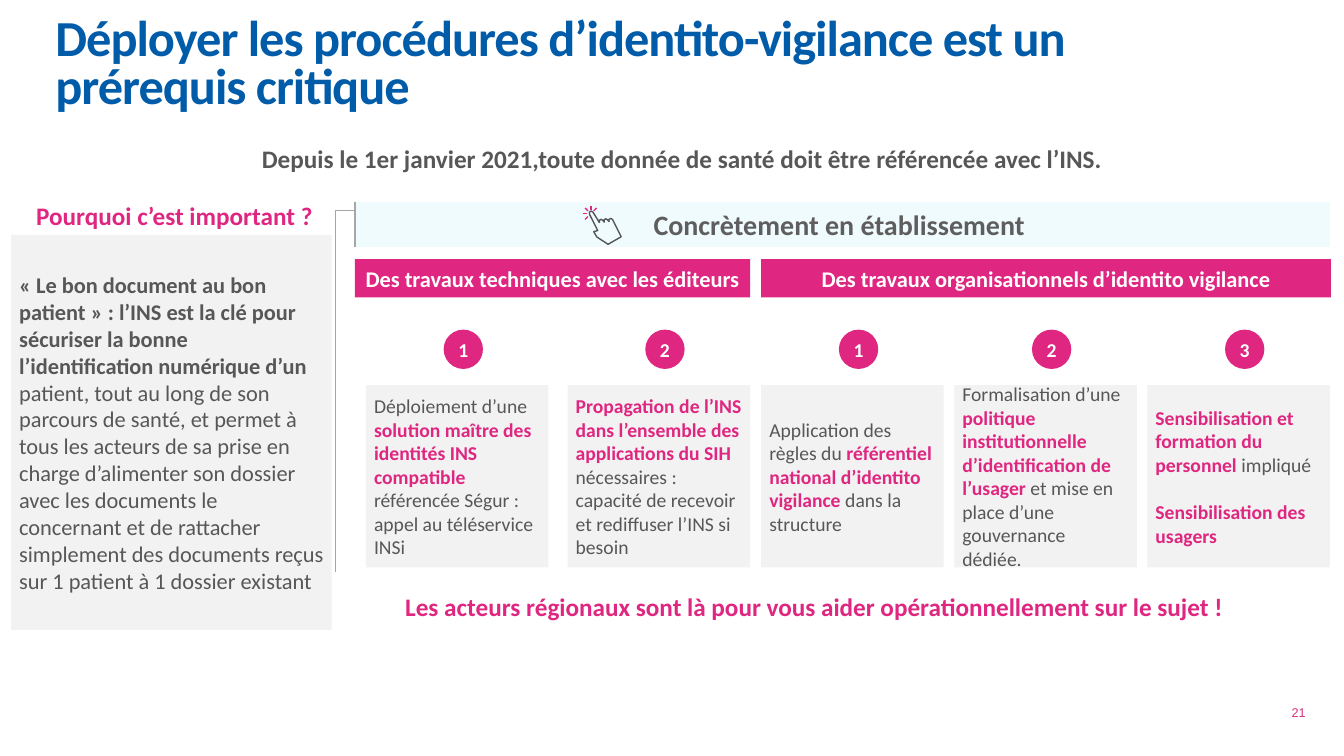
from math import cos, radians, sin

from lxml.etree import SubElement
from pptx import Presentation
from pptx.dml.color import RGBColor as RGB
from pptx.enum.shapes import MSO_CONNECTOR as Wire, MSO_SHAPE as Kind
from pptx.enum.text import MSO_ANCHOR as Anchor, PP_ALIGN as Align
from pptx.oxml.ns import qn
from pptx.util import Inches, Pt

HEX = {
    "pink": "DF2680", "page": "DB3080", "blue": "005CA9", "text": "575757",
    "head": "5E5E5E", "white": "FFFFFF", "grey": "F2F2F2", "pale": "F0FBFE",
    "line": "A6A6A6", "hand": "555557",
}
RGBS = {name: RGB.from_string(code) for name, code in HEX.items()}
TIGHT = (0.06, 0.06, 0.06, 0.06)
CARD = (0.08, 0.12, 0.08, 0.12)
NOTE = (0.1, 0.05, 0.1, 0.05)

deck = Presentation()
deck.slide_width, deck.slide_height = Inches(13.33), Inches(7.5)
shapes = deck.slides.add_slide(deck.slide_layouts[6]).shapes


def add(box, kind=None, fill=None):
    """Add a text box, or a borderless filled shape when a kind is given."""
    place = [Inches(n) for n in box]
    if kind is None:
        return shapes.add_textbox(*place)
    shape = shapes.add_shape(kind, *place)
    shape.shadow.inherit = False
    shape.fill.solid()
    shape.fill.fore_color.rgb = RGBS[fill]
    shape.line.fill.background()
    return shape


def write(shape, paras, size, inset=TIGHT, align=Align.CENTER,
          anchor=Anchor.MIDDLE, font="Calibri", wrap=True, **form):
    """Fill a shape with paragraphs, each a list of (text, colour, bold) runs."""
    frame = shape.text_frame
    left, top, right, low = [Inches(n) for n in inset]
    look = {"margin_left": left, "margin_top": top, "margin_right": right,
            "margin_bottom": low, "vertical_anchor": anchor, "word_wrap": wrap}
    for key, val in look.items():
        setattr(frame, key, val)
    for i, runs in enumerate(paras):
        para = frame.add_paragraph() if i else frame.paragraphs[0]
        for key, val in {"alignment": align, **form}.items():
            setattr(para, key, val)
        for text, tone, bold in runs:
            run = para.add_run()
            run.text = text
            for key, val in {"name": font, "size": Pt(size), "bold": bold}.items():
                setattr(run.font, key, val)
            run.font.color.rgb = RGBS[tone]
    return frame


# Title and lead sentence
title = write(add((0.49, 0.28, 10.64, 0.75)), [[(
    "Déployer les procédures d’identito-vigilance est un prérequis critique",
    "blue", True)]], 36, align=Align.LEFT, line_spacing=0.8)
title.paragraphs[0].runs[0].font._element.set("spc", "-70")
write(add((0.82, 1.37, 11.89, 0.4)), [[(
    "Depuis le 1er janvier 2021,toute donnée de santé doit être référencée avec l’INS.",
    "text", True)]], 18, NOTE, anchor=Anchor.TOP, space_after=Pt(4))

# Why it matters
write(add((0.19, 1.93, 3.08, 0.42), Kind.RECTANGLE, "white"),
      [[("Pourquoi c’est important ?", "pink", True)]], 18)
write(add((0.11, 2.33, 3.18, 3.92), Kind.RECTANGLE, "grey"), [[
    ("« Le bon document au bon patient » : l’INS est la clé pour sécuriser "
     "la bonne l’identification numérique d’un ", "text", True),
    ("patient, tout au long de son parcours de santé, et permet à tous les acteurs "
     "de sa prise en charge d’alimenter son dossier avec les documents le concernant "
     "et de rattacher simplement des documents reçus sur 1 patient à 1 dossier "
     "existant", "text", False),
]], 16, CARD, Align.LEFT, space_after=Pt(4))

# Banner: the adjustments are y, x pairs along the callout line
banner = add((3.52, 2, 9.67, 0.45), Kind.LINE_CALLOUT_2_ACCENT_BAR, "pale")
for i, val in enumerate((0.19, 0, 0.19, -0.02, 8.16, -0.02)):
    banner.adjustments[i] = val
banner.line.color.rgb = RGBS["line"]
banner.line.width = Pt(1)
write(banner, [[("Concrètement en établissement ", "head", True)]], 20)

# Click rays: five spokes, 45 degrees apart, around the fingertip
hub_x, hub_y, near, far = 5.86, 2.12, 0.04, 0.08
for turn in range(135, 316, 45):
    dx, dy = cos(radians(turn)), sin(radians(turn))
    ends = [Inches(n) for r in (near, far) for n in (hub_x + r * dx, hub_y + r * dy)]
    ray = shapes.add_connector(Wire.STRAIGHT, *ends)
    ray.line.color.rgb = RGBS["pink"]
    ray.line.width = Pt(1)
    SubElement(ray._element.spPr, qn("a:effectLst"))

# Hand: drawn upright in hundredths of an inch, then tilted about the fingertip
tips = (0, 12, 14, 16)
finger = ((0, 2), (1, 0), (3, 0), (4, 2))
wrist = [(16, 37), (1, 37)]
thumb = [(-5, 25), (-5, 19), (-1, 20)]
upright = [(4.4 * i + x, tip + y) for i, tip in enumerate(tips) for x, y in finger]
upright += wrist + thumb
tip_x, tip_y, tilt = 584, 211, radians(30)
dots = [(10 * (tip_x + x * cos(tilt) + y * sin(tilt)),
         10 * (tip_y - x * sin(tilt) + y * cos(tilt))) for x, y in upright]
path = shapes.build_freeform(*dots[0], scale=Inches(0.001))
path.add_line_segments(dots[1:], close=True)
hand = path.convert_to_shape()
hand.shadow.inherit = False
hand.fill.background()
hand.line.color.rgb = RGBS["hand"]
hand.line.width = Pt(1)

# Streams of work: header left and width, first card, card pitch, texts.
# Words between stars are pink and bold.
streams = [
    ("Des travaux techniques avec les éditeurs", 3.52, 3.92, 3.63, 2, [
        ["Déploiement d’une *solution maître des identités INS compatible *"
         "référencée Ségur : appel au téléservice INSi"],
        ["*Propagation de l’INS dans l’ensemble des applications du SIH *"
         "nécessaires : capacité de recevoir et rediffuser l’INS si besoin"],
    ]),
    ("Des travaux organisationnels d’identito vigilance", 7.55, 5.65, 7.55, 1.915, [
        ["Application des règles du *référentiel national d’identito vigilance *"
         "dans la structure"],
        ["Formalisation d’une *politique institutionnelle d’identification de "
         "l’usager* et mise en place d’une gouvernance dédiée."],
        ["*Sensibilisation et formation du personnel *impliqué",
         "*Sensibilisation des usagers*"],
    ]),
]
side, dot = 1.81, 0.39
for head, left, width, first, pitch, cards in streams:
    write(add((left, 2.57, width, 0.38), Kind.RECTANGLE, "pink"),
          [[(head, "white", True)]], 16)
    for i, texts in enumerate(cards):
        x = first + i * pitch
        paras = [[(bit, "pink" if n % 2 else "text", n % 2 == 1)
                  for n, bit in enumerate(text.split("*")) if bit] for text in texts]
        frame = write(add((x, 3.82, side, side), Kind.RECTANGLE, "grey"),
                      paras, 14, CARD, Align.LEFT)
        for para in frame.paragraphs[1:]:
            para.space_before = Pt(17)
        write(add((x + 0.77, 3.27, dot, dot), Kind.OVAL, "pink"),
              [[(str(i + 1), "white", True)]], 14)

# Closing line and page number
write(add((3.75, 5.82, 8.71, 0.4)), [[(
    "Les acteurs régionaux sont là pour vous aider opérationnellement sur le sujet ! ",
    "pink", True)]], 18, NOTE, space_after=Pt(4))
write(add((12.71, 6.94, 0.34, 0.26)), [[("21", "page", False)]], 9,
      anchor=Anchor.BOTTOM, font="Arial", wrap=False)

deck.save("out.pptx")
